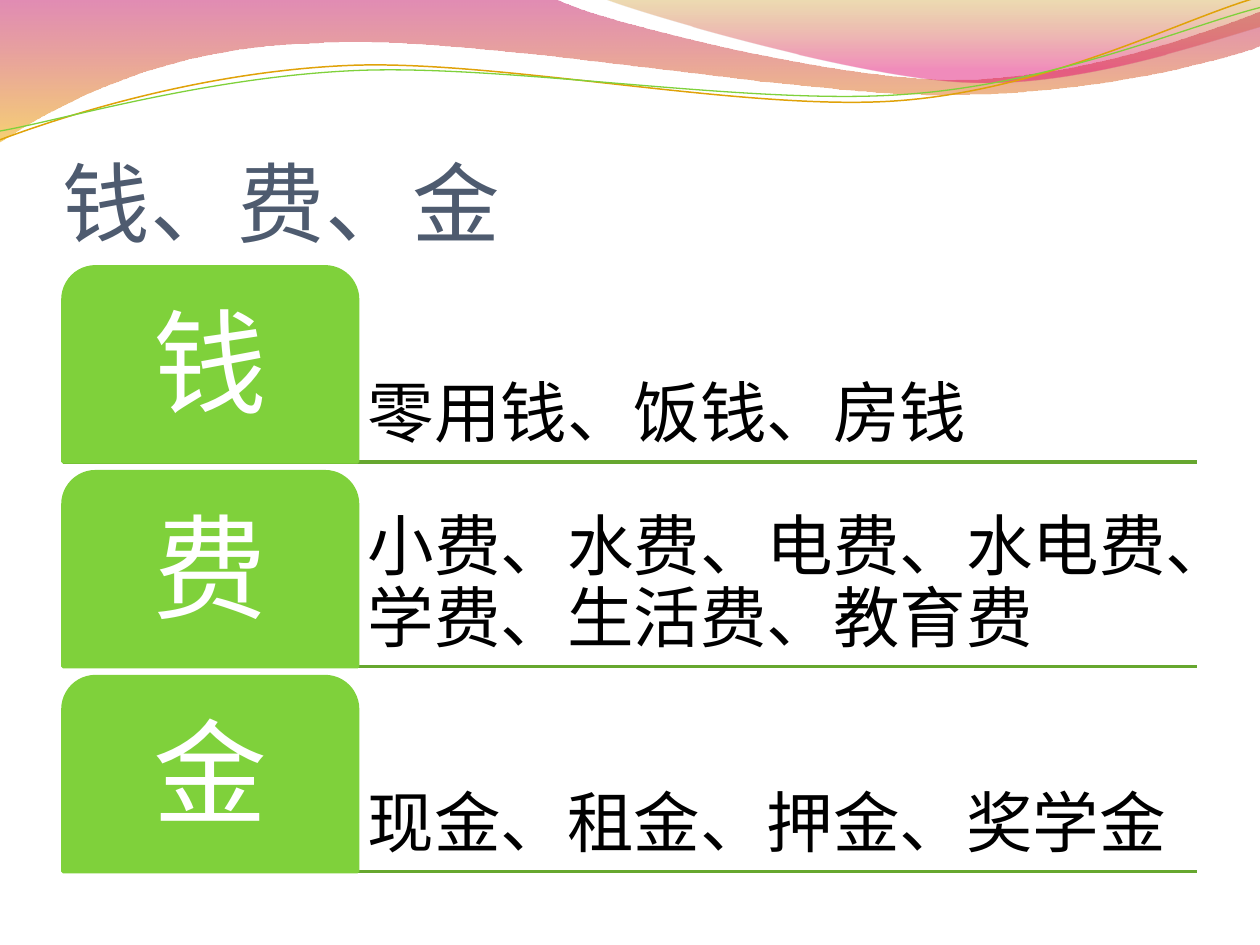
import lxml.etree
import pptx
import pptx.util
from pptx.dml.color import RGBColor
from pptx.enum.shapes import MSO_CONNECTOR, MSO_SHAPE
from pptx.enum.text import MSO_ANCHOR, PP_ALIGN
from pptx.oxml.ns import qn

Cm, Pt = pptx.util.Cm, pptx.util.Pt

TITLE = "钱、费、金"
ROWS = [
    ("钱", "零用钱、饭钱、房钱"),
    ("费", "小费、水费、电费、水电费、学费、生活费、教育费"),
    ("金", "现金、租金、押金、奖学金"),
]

THEME = {
    "title": {"font": "Calibri", "size": 50, "color": "4E5B6F"},
    "label": {"font": "TeX Gyre Pagella", "size": 65, "color": "FFFFFF"},
    "words": {"font": "TeX Gyre Pagella", "size": 38, "color": "000000"},
    "tab": "7FD13B",
    "rule": "66A72F",
}

# Wave outlines on a grid 10 units wide: one point is a straight segment's
# end, three are a Bezier segment's two handles and end.
GRID = 2.54
BANDS = [
    {"start": (0, 0),
     "segments": [[(4.4, -0.01)],
                  [(4.76, 0.17), (6.64, 0.63), (7.58, 0.63)],
                  [(8.53, 0.63), (9.58, 0.26), (10, 0.09)],
                  [(10.01, 0.36)],
                  [(9.83, 0.44), (8.7, 0.76), (7.46, 0.75)],
                  [(6.22, 0.75), (3.82, 0.28), (2.57, 0.34)],
                  [(1.29, 0.36), (0.46, 0.83), (-0.01, 1.13)],
                  [(0, 0)]],
     "stops": [(0, "BD0059", 45), (1, "F0AB00", 55)]},
    {"start": (4.79, -0.01),
     "segments": [[(5.09, 0.11), (6.82, 0.62), (7.69, 0.65)],
                  [(8.56, 0.69), (9.61, 0.32), (10, 0.21)],
                  [(10, 0)],
                  [(4.79, -0.01)]],
     "stops": [(0, "C38B00", 30), (0.8, "E1006B", 45)]},
]
STRANDS = [
    {"start": (0, 1.11),
     "segments": [[(0.48, 0.93), (1.58, 0.57), (2.77, 0.52)],
                  [(3.95, 0.47), (5.93, 0.89), (7.13, 0.8)],
                  [(8.33, 0.71), (9.38, 0.15), (9.98, -0.02)]],
     "line": ("E0A209", 0.85)},
    {"start": (0, 1.04),
     "segments": [[(0.47, 0.96), (1.64, 0.61), (2.83, 0.56)],
                  [(4.03, 0.51), (5.97, 0.84), (7.17, 0.75)],
                  [(8.36, 0.67), (9.41, 0.21), (10, 0.06)]],
     "line": ("7FD13B", 0.75)},
]

LEFT, RIGHT = 1.27, 24.13
ROWS_TOP, ROW_HEIGHT, ROW_PITCH = 5.38, 3.93, 4.13
TAB_WIDTH = 5.94


def add_wave(page, wave, close):
    """Draw the outline through all points, then bend each trio into a curve."""
    def place(point):
        return tuple(Cm(value * GRID) for value in point)

    builder = page.shapes.build_freeform(*place(wave["start"]), scale=1.0)
    points = [place(point) for segment in wave["segments"] for point in segment]
    builder.add_line_segments(points, close=close)
    shape = builder.convert_to_shape()
    shape.shadow.inherit = False

    steps = iter(list(shape.element.spPr.iter(qn("a:lnTo"))))
    for segment in wave["segments"]:
        trio = [next(steps) for _ in segment]
        if len(trio) == 3:
            curve = lxml.etree.Element(qn("a:cubicBezTo"))
            trio[0].addprevious(curve)
            for step in trio:
                curve.append(step[0])
                step.getparent().remove(step)
    return shape


def set_line(line, color, width):
    line.color.rgb = RGBColor.from_string(color)
    line.width = Pt(width)


def fill_gradient(shape, stops):
    """Fill from top to bottom with (position, colour, opacity percent) stops."""
    shape.fill.gradient()
    shape.fill.gradient_angle = 270
    for stop, (position, color, _) in zip(shape.fill.gradient_stops, stops):
        stop.position = position
        stop.color.rgb = RGBColor.from_string(color)
    for node, (_, _, opacity) in zip(shape.element.spPr.iter(qn("a:srgbClr")), stops):
        lxml.etree.SubElement(node, qn("a:alpha")).set("val", str(opacity * 1000))


def write(shape, text, style, anchor, align=PP_ALIGN.LEFT, margins=(0.2,) * 4, spacing=0.9):
    frame = shape.text_frame
    frame.word_wrap = True
    frame.vertical_anchor = anchor
    (frame.margin_left, frame.margin_top,
     frame.margin_right, frame.margin_bottom) = map(Cm, margins)
    para = frame.paragraphs[0]
    para.alignment = align
    para.line_spacing = spacing
    span = para.add_run()
    span.text = text
    span.font.name = style["font"]
    span.font.size = Pt(style["size"])
    span.font.color.rgb = RGBColor.from_string(style["color"])


def add_rule(page, y):
    rule = page.shapes.add_connector(MSO_CONNECTOR.STRAIGHT, Cm(LEFT), Cm(y), Cm(RIGHT), Cm(y))
    set_line(rule.line, THEME["rule"], 2)
    lxml.etree.SubElement(rule.element.spPr, qn("a:effectLst"))


def add_row(page, top, label, words):
    words_left = LEFT + TAB_WIDTH
    box = page.shapes.add_textbox(Cm(words_left), Cm(top), Cm(RIGHT - words_left), Cm(ROW_HEIGHT))
    write(box, words, THEME["words"], MSO_ANCHOR.BOTTOM)

    tab = page.shapes.add_shape(MSO_SHAPE.ROUND_2_SAME_RECTANGLE,
                                Cm(LEFT), Cm(top), Cm(TAB_WIDTH), Cm(ROW_HEIGHT))
    tab.adjustments[0], tab.adjustments[1] = 0.167, 0
    tab.shadow.inherit = False
    tab.fill.solid()
    tab.fill.fore_color.rgb = RGBColor.from_string(THEME["tab"])
    set_line(tab.line, THEME["tab"], 2)
    write(tab, label, THEME["label"], MSO_ANCHOR.MIDDLE, PP_ALIGN.CENTER)


def main():
    deck = pptx.Presentation()
    deck.slide_width, deck.slide_height = Cm(25.4), Cm(19.05)
    page = deck.slides.add_slide(deck.slide_layouts[6])

    for band in BANDS:
        shape = add_wave(page, band, close=True)
        fill_gradient(shape, band["stops"])
        shape.line.fill.background()
    for strand in STRANDS:
        shape = add_wave(page, strand, close=False)
        shape.fill.background()
        set_line(shape.line, *strand["line"])

    title = page.shapes.add_textbox(Cm(LEFT), Cm(1.95), Cm(RIGHT - LEFT), Cm(3.18))
    write(title, TITLE, THEME["title"], MSO_ANCHOR.BOTTOM, margins=(0, 0.13, 0, 0), spacing=1.0)

    tops = [ROWS_TOP + index * ROW_PITCH for index in range(len(ROWS))]
    for top in reversed(tops):
        add_rule(page, top + ROW_HEIGHT)
    for top, (label, words) in zip(tops, ROWS):
        add_row(page, top, label, words)

    deck.save("out.pptx")


if __name__ == "__main__":
    main()
